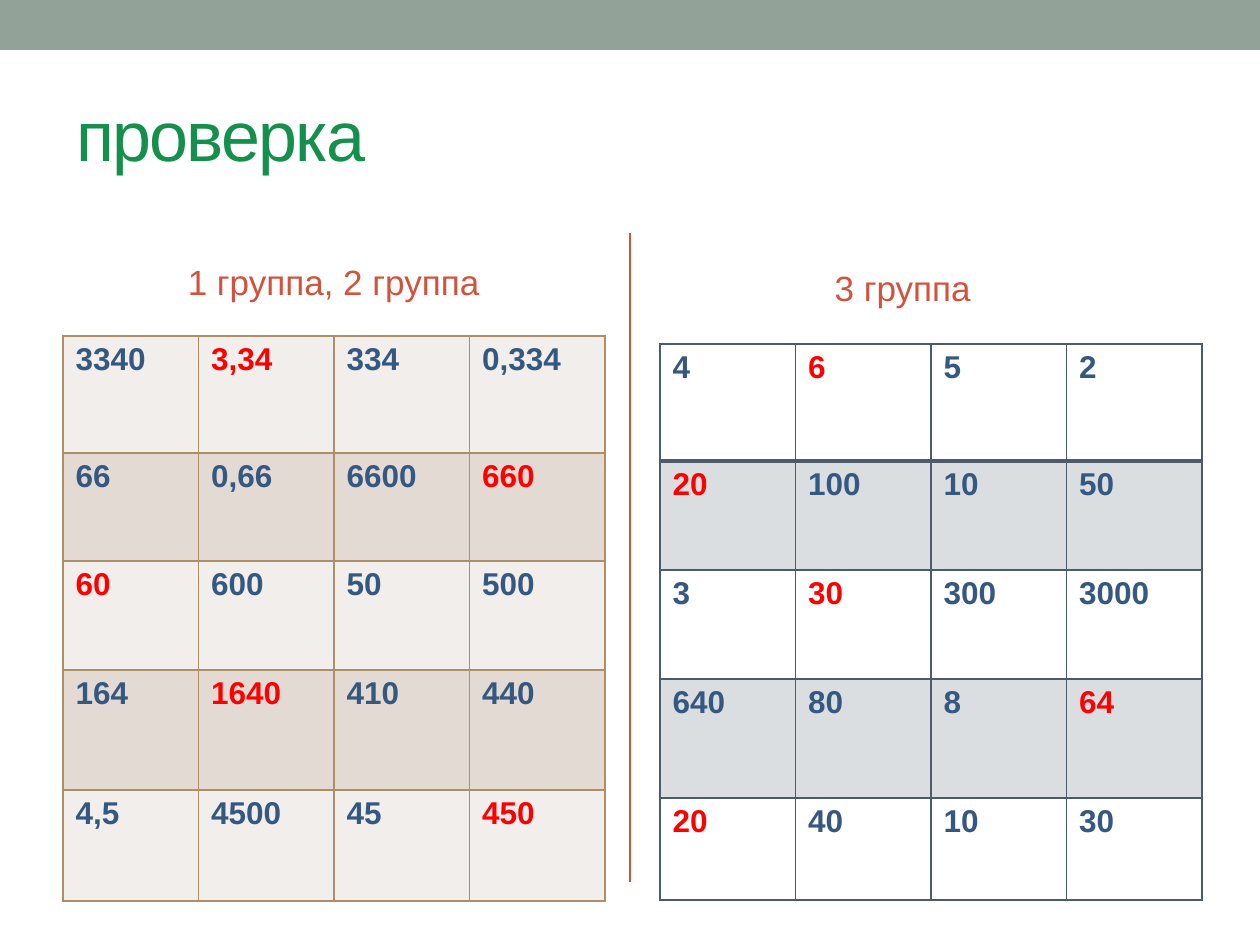
from lxml.etree import SubElement
from pptx import Presentation
from pptx.dml.color import RGBColor
from pptx.enum.shapes import MSO_CONNECTOR, MSO_SHAPE
from pptx.enum.text import MSO_ANCHOR, PP_ALIGN
from pptx.oxml.ns import qn
from pptx.util import Pt

SCALE = 914400 / 126
GREEN, RUST, NAVY, RED = "14904C", "D2533C", "355881", "FF0000"
SAGE, TAN, SLATE = "93A299", "AD8F67", "4C5A6A"
LIGHT, DARK = "F1EEEB", "E3DBD3"


def px(length):
    return round(length * SCALE)


def color(value):
    return RGBColor.from_string(value)


def apply(target, values):
    for name, value in values.items():
        setattr(target, name, value)


class SlideBuilder:
    font_name = "Arial"

    def __init__(self, slide):
        self.slide = slide

    def add_text_run(self, paragraph, text, size, ink, bold=False):
        run = paragraph.add_run()
        run.text = text
        apply(run.font, {"name": self.font_name, "size": Pt(size), "bold": bold})
        run.font.color.rgb = color(ink)
        return run

    def bar(self, left, top, width, height, fill):
        shape = self.slide.shapes.add_shape(
            MSO_SHAPE.RECTANGLE, *map(px, (left, top, width, height)))
        shape.shadow.inherit = False
        shape.fill.solid()
        shape.fill.fore_color.rgb = color(fill)
        shape.line.fill.background()

    def line(self, start, end, ink, width):
        connector = self.slide.shapes.add_connector(
            MSO_CONNECTOR.STRAIGHT, *map(px, (*start, *end)))
        connector.line.color.rgb = color(ink)
        connector.line.width = Pt(width)
        SubElement(connector._element.spPr, qn("a:effectLst"))

    def text(self, box, text, size, ink, align, spacing=0, right_inset=13):
        shape = self.slide.shapes.add_textbox(*map(px, box))
        apply(shape.text_frame, {
            "word_wrap": True,
            "vertical_anchor": MSO_ANCHOR.MIDDLE,
            "margin_right": px(right_inset),
        })
        paragraph = shape.text_frame.paragraphs[0]
        paragraph.alignment = align
        run = self.add_text_run(paragraph, text, size, ink)
        if spacing:
            run._r.get_or_add_rPr().set("spc", str(spacing * 100))

    def border(self, cell, side, ink, width):
        properties = cell._tc.get_or_add_tcPr()
        line = SubElement(properties, qn(f"a:ln{side}"), w=str(Pt(width)))
        SubElement(SubElement(line, qn("a:solidFill")), qn("a:srgbClr"), val=ink)

    def fill(self, cell, fill, alpha):
        if fill is None:
            cell.fill.background()
            return
        cell.fill.solid()
        cell.fill.fore_color.rgb = color(fill)
        if alpha < 100:
            swatch = cell._tc.tcPr.find(f"{qn('a:solidFill')}/{qn('a:srgbClr')}")
            SubElement(swatch, qn("a:alpha"), val=str(alpha * 1000))

    def table(self, left, top, width, heights, rows, answers, ink, bands,
              alpha=100, header_rule=1):
        columns = len(rows[0])
        frame = self.slide.shapes.add_table(
            len(rows), columns, *map(px, (left, top, width, sum(heights))))
        table = frame.table
        apply(table, {"first_row": False, "horz_banding": False})
        for column in table.columns:
            column.width = px(width / columns)
        for index, (height, values) in enumerate(zip(heights, rows)):
            table.rows[index].height = px(height)
            rules = {"L": 1, "R": 1,
                     "T": header_rule if index == 1 else 1,
                     "B": header_rule if index == 0 else 1}
            for position, value in enumerate(values):
                cell = table.cell(index, position)
                for side, rule in rules.items():
                    self.border(cell, side, ink, rule)
                self.fill(cell, bands[index % 2], alpha)
                text_color = RED if position == answers[index] else NAVY
                self.add_text_run(
                    cell.text_frame.paragraphs[0], value, 18, text_color, True)


def main():
    presentation = Presentation()
    apply(presentation, {"slide_width": px(1260), "slide_height": px(945)})
    builder = SlideBuilder(presentation.slides.add_slide(presentation.slide_layouts[6]))

    builder.bar(0, 0, 1260, 50, SAGE)
    builder.line((630, 233), (630, 882), RUST, 1.5)
    builder.text((64, 66, 1134, 136), "проверка", 40, GREEN, PP_ALIGN.LEFT, spacing=-1)
    builder.text((63, 244, 542, 74), "1 группа, 2 группа", 20, RUST, PP_ALIGN.CENTER)
    builder.text((699, 255, 456, 66), "3 группа", 20, RUST, PP_ALIGN.CENTER,
                 right_inset=61)

    builder.table(
        63, 336, 542, (117, 108, 109, 120, 111),
        [("3340", "3,34", "334", "0,334"),
         ("66", "0,66", "6600", "660"),
         ("60", "600", "50", "500"),
         ("164", "1640", "410", "440"),
         ("4,5", "4500", "45", "450")],
        (1, 3, 0, 1, 3), TAN, (LIGHT, DARK))
    builder.table(
        660, 344, 542, (117, 109, 109, 119, 102),
        [("4", "6", "5", "2"),
         ("20", "100", "10", "50"),
         ("3", "30", "300", "3000"),
         ("640", "80", "8", "64"),
         ("20", "40", "10", "30")],
        (1, 0, 1, 3, 0), SLATE, (None, SLATE), alpha=20, header_rule=2)

    presentation.save("out.pptx")


if __name__ == "__main__":
    main()
